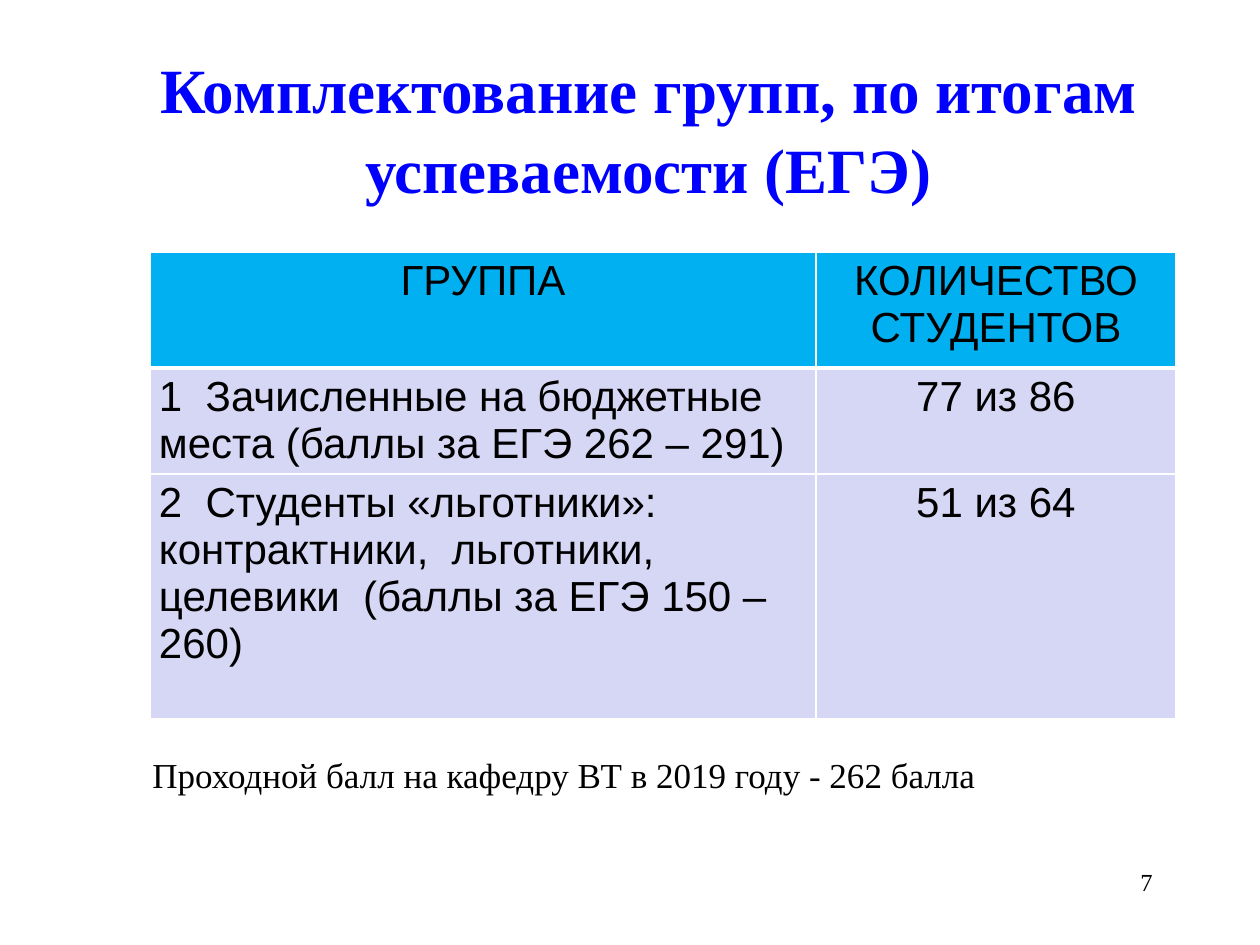
from lxml.etree import SubElement
from pptx import Presentation
from pptx.dml.color import RGBColor
from pptx.enum.text import MSO_ANCHOR, PP_ALIGN
from pptx.oxml.ns import qn
from pptx.util import Emu, Pt

BLUE = RGBColor(0x00, 0x00, 0xFF)
BLACK = RGBColor(0x00, 0x00, 0x00)
WHITE = RGBColor(0xFF, 0xFF, 0xFF)
SKY = RGBColor(0x00, 0xB0, 0xF0)
LAVENDER = RGBColor(0xD6, 0xD6, 0xF5)
SERIF = "Times New Roman"
SANS = "Arial"


def px(length):
    return Emu(round(length * 914400 / 126))


def write(frame, text, size, font_name, color, align, bold=False):
    frame.word_wrap = True
    para = frame.paragraphs[0]
    para.text = text
    para.alignment = align
    para.font.size = Pt(size)
    para.font.name = font_name
    para.font.bold = bold
    para.font.color.rgb = color
    return para


deck = Presentation()
deck.slide_width = px(1260)
deck.slide_height = px(945)
slide = deck.slides.add_slide(deck.slide_layouts[5])

title = slide.shapes.title
title.left, title.top, title.width, title.height = px(139), px(44), px(1019), px(165)
title.text_frame.vertical_anchor = MSO_ANCHOR.MIDDLE
heading = write(title.text_frame, "Комплектование групп, по итогам успеваемости (ЕГЭ)",
                36, SERIF, BLUE, PP_ALIGN.CENTER, True)
heading.line_spacing = 1.05

rows = [
    ("ГРУППА", "КОЛИЧЕСТВО СТУДЕНТОВ"),
    ("1  Зачисленные на бюджетные места (баллы за ЕГЭ 262 – 291)", "77 из 86"),
    ("2  Студенты «льготники»: контрактники,  льготники, "
     "целевики  (баллы за ЕГЭ 150 – 260)", "51 из 64"),
]
column_widths = [666, 360]
row_heights = [116, 106, 245]
table = slide.shapes.add_table(len(rows), len(column_widths), px(150), px(252),
                               px(sum(column_widths)), px(sum(row_heights))).table
for column, width in zip(table.columns, column_widths):
    column.width = px(width)
for row, height in zip(table.rows, row_heights):
    row.height = px(height)

for row_index, texts in enumerate(rows):
    for column_index, text in enumerate(texts):
        cell = table.cell(row_index, column_index)
        cell.margin_left = cell.margin_right = px(9)
        cell.margin_top = cell.margin_bottom = px(6)
        properties = cell._tc.get_or_add_tcPr()
        thickness = {"lnL": 1, "lnR": 1,
                     "lnT": 3 if row_index == 1 else 1,
                     "lnB": 3 if row_index == 0 else 1}
        for side, points in thickness.items():
            border = SubElement(properties, qn(f"a:{side}"), w=str(Pt(points)))
            fill = SubElement(border, qn("a:solidFill"))
            SubElement(fill, qn("a:srgbClr"), val=str(WHITE))
        cell.fill.solid()
        cell.fill.fore_color.rgb = SKY if row_index == 0 else LAVENDER
        centred = row_index == 0 or column_index == 1
        write(cell.text_frame, text, 24, SANS, BLACK,
              PP_ALIGN.CENTER if centred else PP_ALIGN.LEFT)

note = slide.shapes.add_textbox(px(140), px(745), px(1080), px(55))
note_para = write(note.text_frame, "Проходной балл на кафедру ВТ в 2019 году - 262 балла",
                  20, SERIF, BLACK, PP_ALIGN.LEFT)
note_para.line_spacing = 1.05

page_number = slide.shapes.add_textbox(px(903), px(861), px(262), px(63))
write(page_number.text_frame, "7", 14, SERIF, BLACK, PP_ALIGN.RIGHT)

deck.save("out.pptx")
